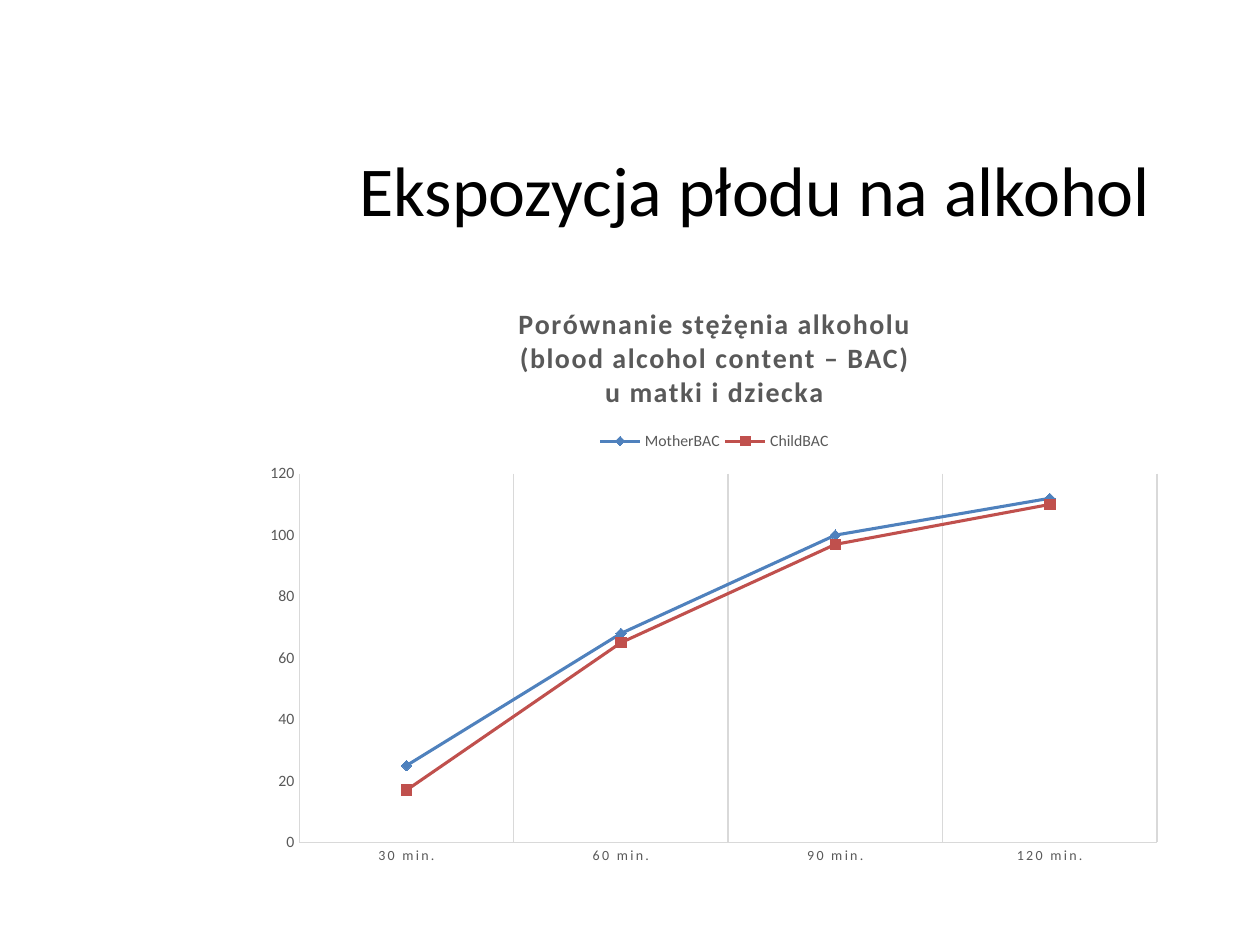
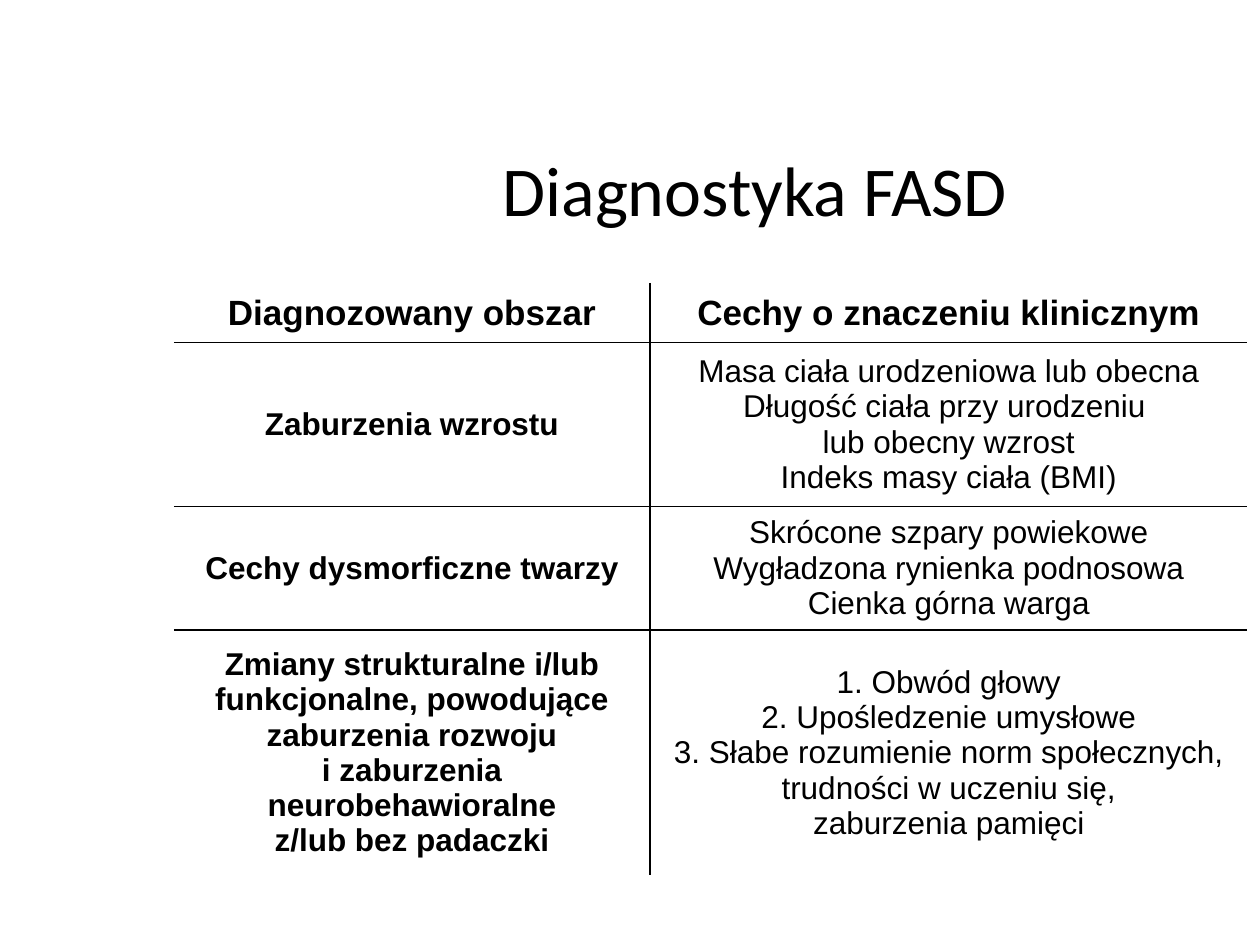
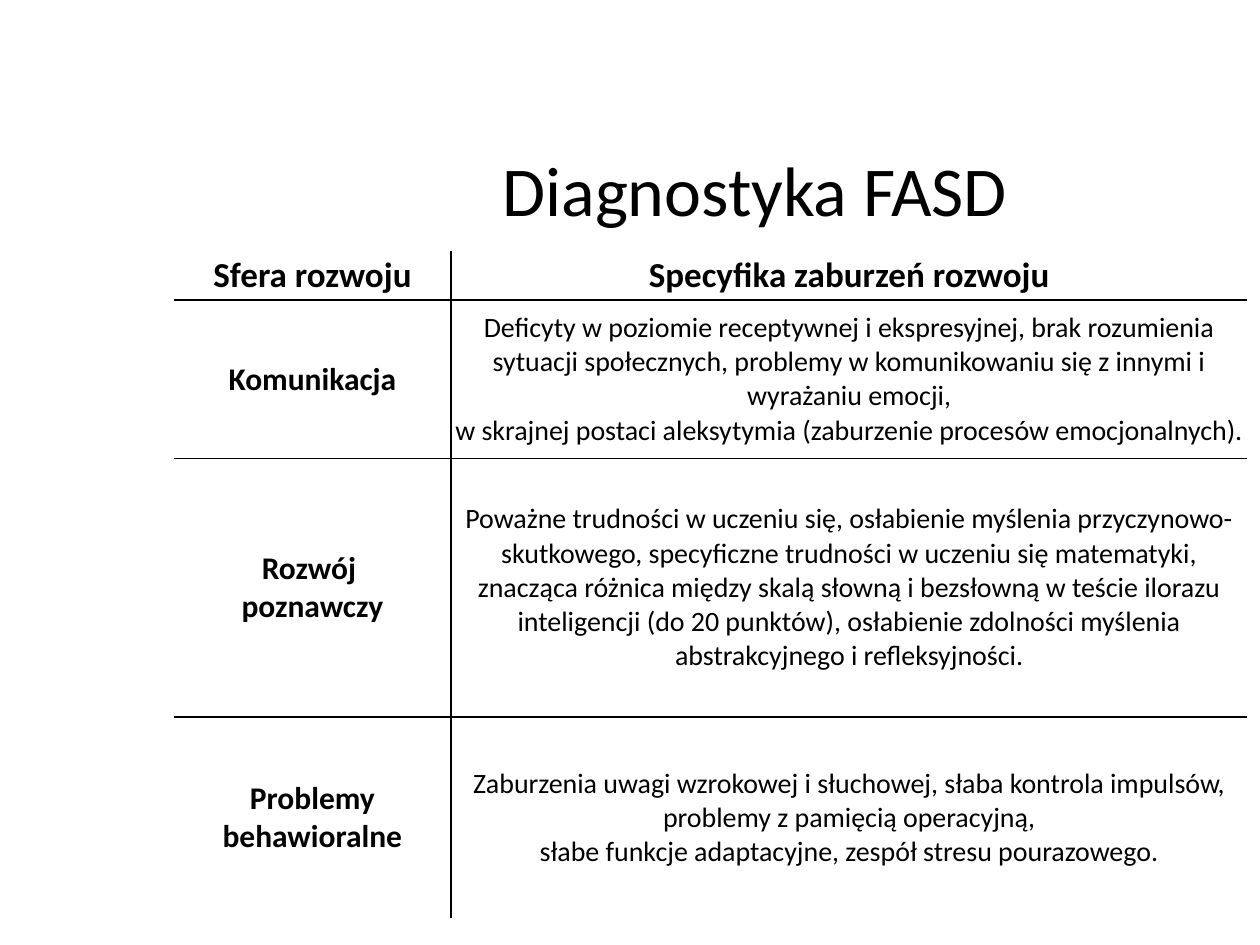
from lxml import etree
from pptx import Presentation
from pptx.chart.data import CategoryChartData
from pptx.dml.color import RGBColor
from pptx.enum.chart import XL_CHART_TYPE, XL_LEGEND_POSITION, XL_MARKER_STYLE, XL_TICK_MARK
from pptx.enum.text import MSO_ANCHOR, PP_ALIGN
from pptx.oxml.ns import qn
from pptx.util import Inches, Pt

CENTER = PP_ALIGN.CENTER
MIDDLE = MSO_ANCHOR.MIDDLE
LINE_MARKERS = XL_CHART_TYPE.LINE_MARKERS
LEGEND_TOP = XL_LEGEND_POSITION.TOP
NO_TICK = XL_TICK_MARK.NONE
DIAMOND = XL_MARKER_STYLE.DIAMOND
SQUARE = XL_MARKER_STYLE.SQUARE

BLACK, WHITE, GRAY, LIGHT_GRAY = "000000", "FFFFFF", "595959", "D9D9D9"
BLUE, RED = "4F81BD", "C0504D"
TITLE_BOX = (1.85, 0.99, 8.28, 1.01)
TABLE_LEFT = 1.38

BAC_TITLE = "Porównanie stężęnia alkoholu\n(blood alcohol content – BAC)\nu matki i dziecka"
BAC_TIMES = ["30 min.", "60 min.", "90 min.", "120 min."]
BAC_SERIES = [
    ("MotherBAC", [25, 68, 100, 112], BLUE, DIAMOND),
    ("ChildBAC", [17, 65, 97, 110], RED, SQUARE),
]

CLINICAL_ROWS = [
    ("Diagnozowany obszar", "Cechy o znaczeniu klinicznym"),
    ("Zaburzenia wzrostu",
     "Masa ciała urodzeniowa lub obecna\nDługość ciała przy urodzeniu \n"
     "lub obecny wzrost\nIndeks masy ciała (BMI)"),
    ("Cechy dysmorficzne twarzy",
     "Skrócone szpary powiekowe\nWygładzona rynienka podnosowa\nCienka górna warga"),
    ("Zmiany strukturalne i/lub funkcjonalne, powodujące zaburzenia rozwoju\n"
     "i zaburzenia neurobehawioralne\vz/lub bez padaczki",
     "1. Obwód głowy\n2. Upośledzenie umysłowe\n3. Słabe rozumienie norm społecznych,\n"
     "trudności w uczeniu się,\nzaburzenia pamięci"),
]

DEVELOPMENT_ROWS = [
    ("Sfera rozwoju", "Specyfika zaburzeń rozwoju"),
    ("Komunikacja",
     "Deficyty w poziomie receptywnej i ekspresyjnej, brak rozumienia sytuacji społecznych, "
     "problemy w komunikowaniu się z innymi i wyrażaniu emocji,\n"
     "w skrajnej postaci aleksytymia (zaburzenie procesów emocjonalnych)."),
    ("Rozwój \npoznawczy",
     "Poważne trudności w uczeniu się, osłabienie myślenia przyczynowo-skutkowego, "
     "specyficzne trudności w uczeniu się matematyki, znacząca różnica między skalą słowną "
     "i bezsłowną w teście ilorazu inteligencji (do 20 punktów), osłabienie zdolności "
     "myślenia abstrakcyjnego i refleksyjności."),
    ("Problemy\nbehawioralne",
     "Zaburzenia uwagi wzrokowej i słuchowej, słaba kontrola impulsów, "
     "problemy z pamięcią operacyjną,\n"
     "słabe funkcje adaptacyjne, zespół stresu pourazowego."),
]


def color(value):
    return RGBColor.from_string(value)


def format_font(font, size, hex_color, name="Calibri", bold=False):
    for attribute, value in {"size": Pt(size), "name": name, "bold": bold}.items():
        setattr(font, attribute, value)
    font.color.rgb = color(hex_color)


def format_line(line, hex_color, width):
    line.color.rgb = color(hex_color)
    line.width = Pt(width)


def write_text(text_frame, text, size, hex_color, name="Calibri", bold=False):
    text_frame.text = text
    for paragraph in text_frame.paragraphs:
        paragraph.alignment = CENTER
        for run in paragraph.runs:
            format_font(run.font, size, hex_color, name, bold)


def add_titled_slide(presentation, title):
    slide = presentation.slides.add_slide(presentation.slide_layouts[6])
    shape = slide.shapes.add_textbox(*map(Inches, TITLE_BOX))
    shape.text_frame.word_wrap = True
    shape.text_frame.vertical_anchor = MIDDLE
    write_text(shape.text_frame, title, 40, BLACK)
    return slide


def make_layout(**values):
    layout = etree.Element(qn("c:layout"))
    manual = etree.SubElement(layout, qn("c:manualLayout"))
    for tag, value in values.items():
        etree.SubElement(manual, qn(f"c:{tag}")).set("val", str(value))
    return layout


def place_chart_part(part, layout, index):
    for old_layout in part.findall(qn("c:layout")):
        part.remove(old_layout)
    part.insert(index, layout)


def add_bac_chart(slide):
    data = CategoryChartData()
    data.categories = BAC_TIMES
    for name, values, _, _ in BAC_SERIES:
        data.add_series(name, values)
    box = map(Inches, (2.01, 2.25, 7.32, 4.72))
    chart = slide.shapes.add_chart(LINE_MARKERS, *box, data).chart
    format_font(chart.font, 10, BLACK)
    chart.plots[0].vary_by_categories = False

    chart.has_title = True
    write_text(chart.chart_title.text_frame, BAC_TITLE, 16, GRAY, bold=True)
    chart.chart_title.include_in_layout = False
    chart.has_legend = True
    chart.legend.position = LEGEND_TOP
    chart.legend.include_in_layout = False
    format_font(chart.legend.font, 9, GRAY)

    for axis, size in ((chart.category_axis, 8), (chart.value_axis, 9)):
        axis.major_tick_mark = NO_TICK
        axis.minor_tick_mark = NO_TICK
        format_font(axis.tick_labels.font, size, GRAY)
        format_line(axis.format.line, LIGHT_GRAY, 0.75)
    chart.value_axis.has_major_gridlines = False
    chart.category_axis.has_major_gridlines = True
    format_line(chart.category_axis.major_gridlines.format.line, LIGHT_GRAY, 0.75)

    for series, (_, _, hex_color, marker_style) in zip(chart.plots[0].series, BAC_SERIES):
        series.smooth = False
        format_line(series.format.line, hex_color, 1.75)
        series.marker.style = marker_style
        series.marker.size = 6
        series.marker.format.fill.solid()
        series.marker.format.fill.fore_color.rgb = color(hex_color)
        format_line(series.marker.format.line, hex_color, 0.75)

    root = chart._chartSpace
    for query, spacing in ((".//c:title//a:rPr", 100), (".//c:catAx//a:defRPr", 120)):
        for properties in root.xpath(query):
            properties.set("spc", str(spacing))
    plot_layout = make_layout(layoutTarget="inner", xMode="edge", yMode="edge",
                              x=0.05, y=0.32, w=0.93, h=0.62)
    place_chart_part(root.xpath(".//c:plotArea")[0], plot_layout, 0)
    legend_layout = make_layout(xMode="edge", yMode="edge", x=0.37, y=0.24, w=0.26, h=0.05)
    place_chart_part(root.xpath(".//c:legend")[0], legend_layout, 1)


def set_border(cell, side, hex_color):
    line = etree.SubElement(cell._tc.get_or_add_tcPr(), qn(f"a:ln{side}"), w=str(Pt(1)))
    if hex_color is None:
        etree.SubElement(line, qn("a:noFill"))
    else:
        fill = etree.SubElement(line, qn("a:solidFill"))
        etree.SubElement(fill, qn("a:srgbClr"), val=hex_color)


def fill_cell(cell, shaded):
    if not shaded:
        cell.fill.background()
        return
    cell.fill.solid()
    cell.fill.fore_color.rgb = color(WHITE)
    fill_color = cell._tc.tcPr.find(f"{qn('a:solidFill')}/{qn('a:srgbClr')}")
    etree.SubElement(fill_color, qn("a:alpha"), val="20000")


def add_diagnosis_table(slide, top, widths, heights, rows, font_name, detail_size):
    box = map(Inches, (TABLE_LEFT, top, sum(widths), sum(heights)))
    table = slide.shapes.add_table(len(rows), len(widths), *box).table
    table.first_row = False
    table.horz_banding = False
    for column, width in zip(table.columns, widths):
        column.width = Inches(width)
    for row, height in zip(table.rows, heights):
        row.height = Inches(height)

    last_row = len(rows) - 1
    for row_index, texts in enumerate(rows):
        header = row_index == 0
        for column_index, text in enumerate(texts):
            cell = table.cell(row_index, column_index)
            label = column_index == 0
            for side in ("left", "right", "top", "bottom"):
                setattr(cell, f"margin_{side}", 0)
            cell.vertical_anchor = MIDDLE
            size = 20 if header else 18 if label else detail_size
            write_text(cell.text_frame, text, size, BLACK, font_name, header or label)
            borders = {
                "L": None if label else BLACK,
                "R": BLACK if label else None,
                "T": WHITE if header else BLACK,
                "B": WHITE if row_index == last_row else BLACK,
            }
            for side, hex_color in borders.items():
                set_border(cell, side, hex_color)
            fill_cell(cell, row_index % 2 == 1)


def main():
    presentation = Presentation()
    presentation.slide_width = Inches(10)
    presentation.slide_height = Inches(7.5)

    add_bac_chart(add_titled_slide(presentation, "Ekspozycja płodu na alkohol"))
    add_diagnosis_table(add_titled_slide(presentation, "Diagnostyka FASD"), 2.25,
                        (3.78, 4.74), (0.47, 1.3, 0.98, 1.95), CLINICAL_ROWS, "Arial", 18)
    add_diagnosis_table(add_titled_slide(presentation, "Diagnostyka FASD"), 2,
                        (2.2, 6.32), (0.38, 1.26, 2.05, 1.6), DEVELOPMENT_ROWS, "Calibri", 16)

    presentation.save("out.pptx")


if __name__ == "__main__":
    main()
